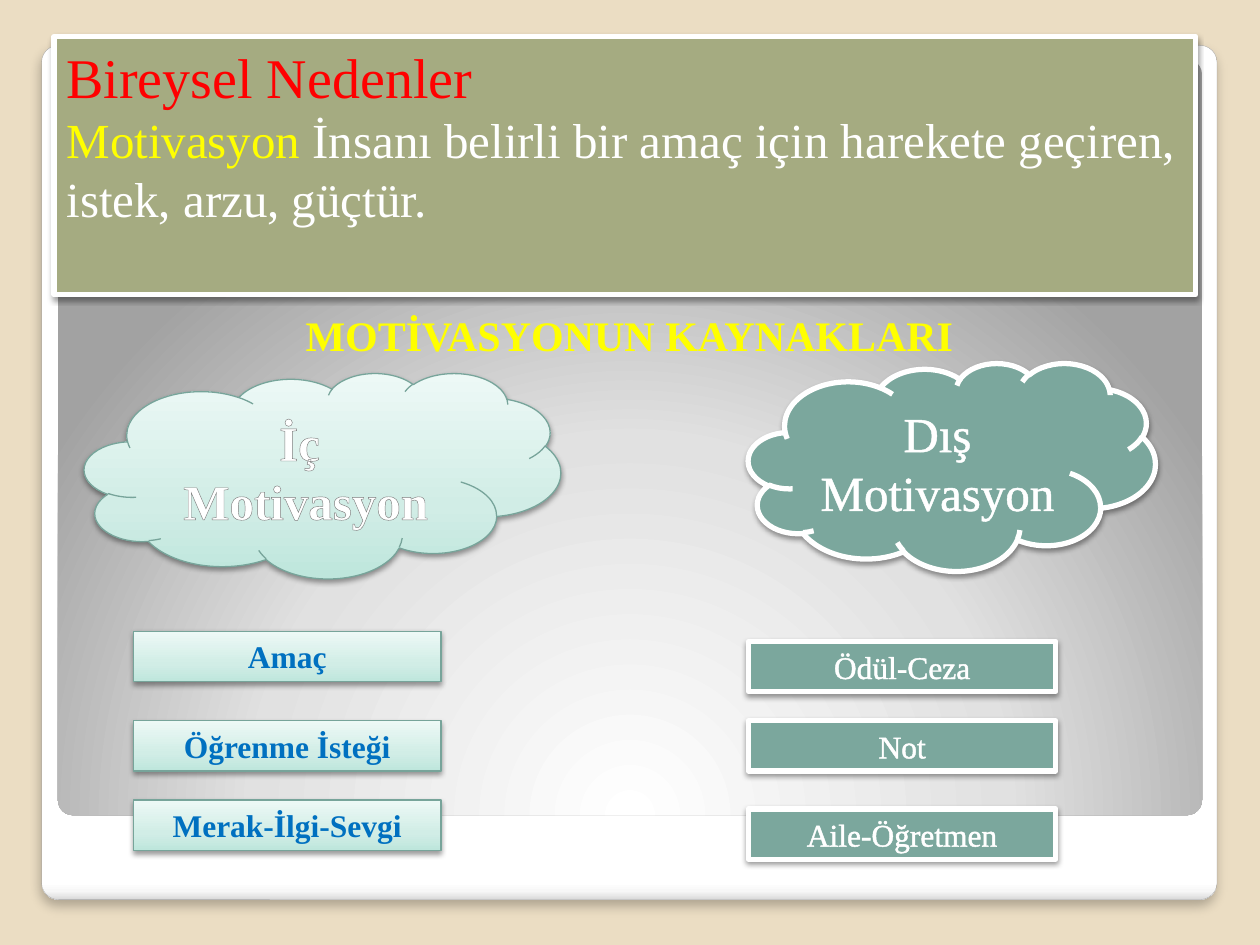
import collections

import lxml.etree
import pptx
import pptx.dml.color
import pptx.enum.shapes
import pptx.enum.text
import pptx.oxml.ns
import pptx.util

RGB = pptx.dml.color.RGBColor
KIND = pptx.enum.shapes.MSO_SHAPE
ALIGN = pptx.enum.text.PP_ALIGN
ANCHOR = pptx.enum.text.MSO_ANCHOR
FIT = pptx.enum.text.MSO_AUTO_SIZE

SAND = RGB(0xEB, 0xDD, 0xC3)
OLIVE = RGB(0xA5, 0xAB, 0x81)
TEAL = RGB(0x7B, 0xA7, 0x9D)
TEAL_EDGE = RGB(0x77, 0xA4, 0x9A)
MINT = RGB(0xBE, 0xE6, 0xDC)
MINT_SOFT = RGB(0xD1, 0xED, 0xE6)
MINT_PALE = RGB(0xED, 0xF9, 0xF6)
WHITE = RGB(0xFF, 0xFF, 0xFF)
MIST = RGB(0xF7, 0xF7, 0xF7)
SILVER = RGB(0xE1, 0xE1, 0xE1)
ASH = RGB(0xDA, 0xDA, 0xDA)
GREY = RGB(0xA2, 0xA2, 0xA2)
RIM = RGB(0xA4, 0xA4, 0xA4)
SHADE = RGB(0x7D, 0x7D, 0x7D)
BLACK = RGB(0, 0, 0)
RED = RGB(0xFF, 0, 0)
YELLOW = RGB(0xFF, 0xFF, 0)
BLUE = RGB(0, 0x70, 0xC0)

FONT = "Times New Roman"
COLUMNS = 100
CELL = pptx.util.Inches(10) // COLUMNS
ROWS = 75

Box = collections.namedtuple("Box", "left top width height")
Span = collections.namedtuple("Span", "text size color bold outline", defaults=(False, None))
Look = collections.namedtuple("Look", "fill line weight shadow")
Style = collections.namedtuple("Style", "look cloud_text tag_text")

SOFT = (38, 3.1, 1.6)
MINT_FILL = ([(0, MINT), (35, MINT_SOFT), (100, MINT_PALE)], 270)
CARD_FILL = ([(0, WHITE), (98, WHITE), (99, MIST), (100, ASH)], 90)
GLOW_FILL = ([(0, WHITE), (55, SILVER), (100, GREY)], None)
WHITE_EDGE = (WHITE, 1.45)
INNER = Style(Look(MINT_FILL, TEAL_EDGE, 0.75, SOFT),
              dict(color=WHITE, bold=True, outline=(SHADE, 0.83)), dict(color=BLUE, bold=True))
OUTER = Style(Look(TEAL, WHITE, 3, SOFT),
              dict(color=WHITE, outline=WHITE_EDGE), dict(color=WHITE, outline=WHITE_EDGE))


def within(box, left, top, width, height):
    """Return the part of a box at an offset given in grid cells."""
    return Box(box.left + left, box.top + top, width, height)


def add_node(parent, tag, **values):
    """Append a DrawingML element and return it."""
    node = lxml.etree.SubElement(parent, pptx.oxml.ns.qn("a:" + tag))
    for name, value in values.items():
        node.set(name, str(value))
    return node


def paint_gradient(shape, stops, angle):
    """Fill a shape with a linear gradient, or a circular one if no angle is given."""
    shape.fill.gradient()
    gradient = shape.element.spPr.find(pptx.oxml.ns.qn("a:gradFill"))
    for child in list(gradient):
        gradient.remove(child)
    stop_list = add_node(gradient, "gsLst")
    for share, color in stops:
        add_node(add_node(stop_list, "gs", pos=share * 1000), "srgbClr", val=color)
    if angle is None:
        circle = add_node(gradient, "path", path="circle")
        add_node(circle, "fillToRect", l=50000, t=175000, r=50000, b=-75000)
    else:
        add_node(gradient, "lin", ang=angle * 60000, scaled=0)


def cast_shadow(shape, strength, blur, distance):
    """Give a shape a black shadow that falls straight down."""
    effects = shape.element.spPr.find(pptx.oxml.ns.qn("a:effectLst"))
    shadow = add_node(effects, "outerShdw", blurRad=pptx.util.Pt(blur), dist=pptx.util.Pt(distance),
                      dir=90 * 60000, algn="ctr", rotWithShape=0)
    add_node(add_node(shadow, "srgbClr", val=BLACK), "alpha", val=strength * 1000)


def add_panel(page, kind, box, look):
    """Draw one preset shape with its fill, line and shadow."""
    shape = page.shapes.add_shape(kind, *(round(length * CELL) for length in box))
    shape.shadow.inherit = False
    if isinstance(look.fill, RGB):
        shape.fill.solid()
        shape.fill.fore_color.rgb = look.fill
    else:
        paint_gradient(shape, *look.fill)
    if look.line is None:
        shape.line.fill.background()
    else:
        shape.line.color.rgb = look.line
        shape.line.width = pptx.util.Pt(look.weight)
    if look.shadow:
        cast_shadow(shape, *look.shadow)
    return shape


def write(shape, lines, align=ALIGN.CENTER, anchor=ANCHOR.TOP, fit=FIT.NONE):
    """Write lines of spans into a shape."""
    frame = shape.text_frame
    frame.word_wrap = True
    frame.auto_size = fit
    frame.vertical_anchor = anchor
    for index, spans in enumerate(lines):
        para = frame.add_paragraph() if index else frame.paragraphs[0]
        para.alignment = align
        for span in spans:
            run = para.add_run()
            run.text = span.text
            run.font.name = FONT
            run.font.size = pptx.util.Pt(span.size)
            run.font.bold = span.bold
            run.font.color.rgb = span.color
            if span.outline:
                color, weight = span.outline
                edge = add_node(run.font.fill._xPr, "ln", w=pptx.util.Pt(weight))
                add_node(add_node(edge, "solidFill"), "srgbClr", val=color)
                run.font.fill._xPr.insert(0, edge)


def draw_backdrop(page, box):
    """Draw the white card and the glowing panel on it."""
    page.background.fill.solid()
    page.background.fill.fore_color.rgb = SAND
    card = add_panel(page, KIND.ROUNDED_RECTANGLE, within(box, 3.3, 3.6, 93.3, 67.8),
                     Look(CARD_FILL, RIM, 0.16, (25, 6, 4)))
    glow = add_panel(page, KIND.ROUNDED_RECTANGLE, within(box, 4.6, 4.7, 90.8, 60),
                     Look(GLOW_FILL, None, 0, None))
    for panel in (card, glow):
        panel.adjustments[0] = 0.02


def draw_definition(page, box):
    """Draw the olive panel with the heading and the definition."""
    panel = add_panel(page, KIND.RECTANGLE, box, Look(OLIVE, WHITE, 3, SOFT))
    definition = " İnsanı belirli bir amaç için harekete geçiren, istek, arzu, güçtür."
    write(panel, [[Span("Bireysel Nedenler", 32, RED)],
                  [Span("Motivasyon", 28, YELLOW), Span(definition, 28, WHITE)]], ALIGN.LEFT)


def draw_source(page, box, words, tags, indent, style):
    """Draw a cloud as large as the box, and its tags in rows below the cloud."""
    cloud = add_panel(page, KIND.CLOUD, box, style.look)
    write(cloud, [[Span(word, 28, **style.cloud_text)] for word in words], anchor=ANCHOR.MIDDLE)
    for row, text in tags:
        tag = add_panel(page, KIND.RECTANGLE, within(box, indent, row, 24.4, 4), style.look)
        write(tag, [[Span(text, 18, **style.tag_text)]], fit=FIT.SHAPE_TO_FIT_TEXT)


def draw_caption(page, box):
    """Write the caption above the two clouds."""
    caption = page.shapes.add_textbox(*(round(length * CELL) for length in box))
    write(caption, [[Span("MOTİVASYONUN KAYNAKLARI", 24, YELLOW, True, WHITE_EDGE)]],
          fit=FIT.SHAPE_TO_FIT_TEXT)


def main():
    """Build the slide and save it."""
    deck = pptx.Presentation()
    deck.slide_width = COLUMNS * CELL
    deck.slide_height = ROWS * CELL
    page = deck.slides.add_slide(deck.slide_layouts[6])
    draw_backdrop(page, Box(0, 0, COLUMNS, ROWS))
    draw_definition(page, Box(4.3, 2.9, 90.6, 20.5))
    draw_source(page, Box(6.7, 29.6, 37.8, 16.3), ["İç ", "Motivasyon"],
                [(20.5, "Amaç"), (27.6, "Öğrenme İsteği"), (33.9, "Merak-İlgi-Sevgi")], 3.9, INNER)
    draw_source(page, Box(59.4, 28.8, 32.3, 16.5), ["Dış", "Motivasyon"],
                [(22.1, "Ödül-Ceza"), (28.4, "Not"), (35.4, "Aile-Öğretmen")], 0, OUTER)
    draw_caption(page, Box(23.2, 24.1, 53.5, 5))
    deck.save("out.pptx")


if __name__ == "__main__":
    main()
